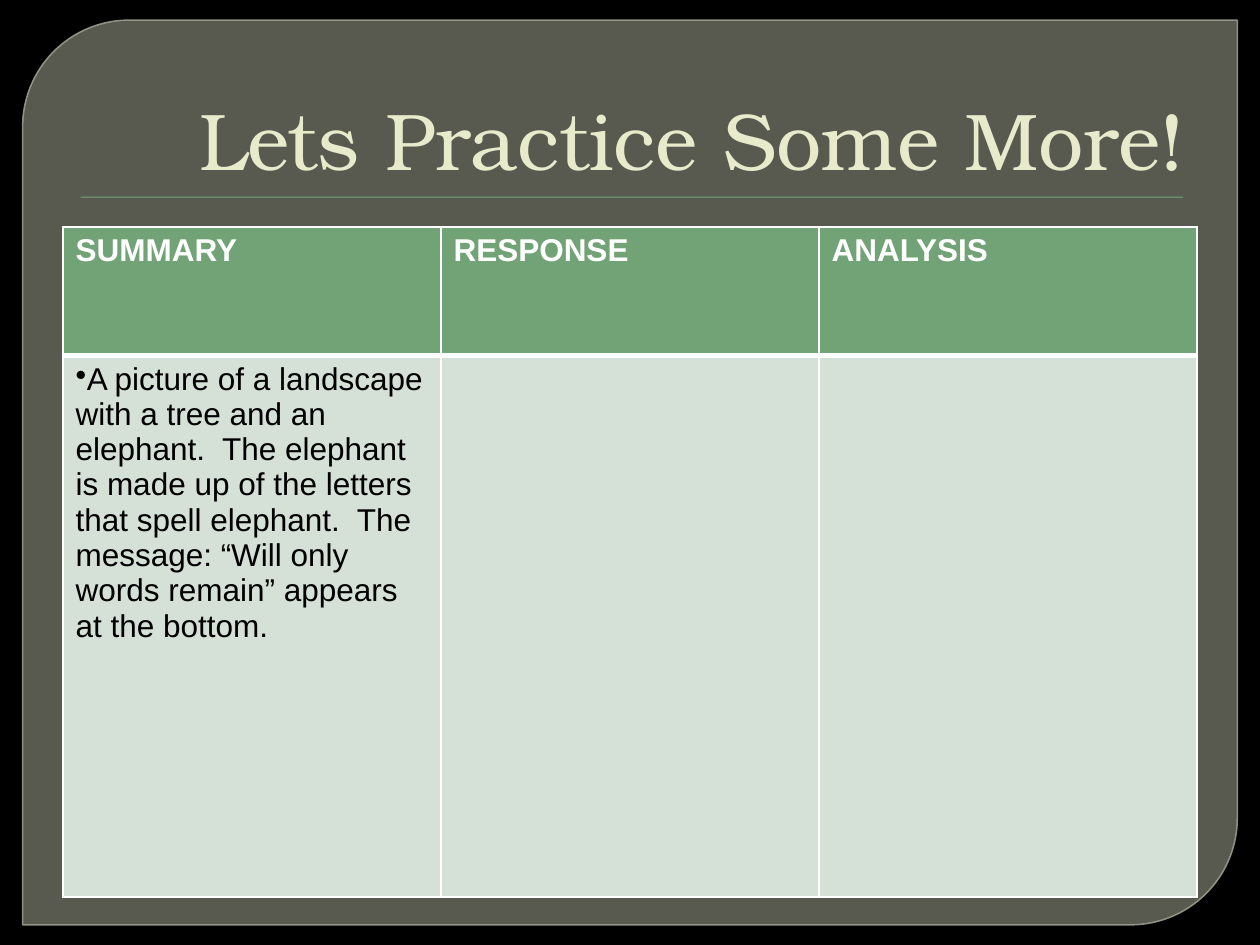
import pptx
import pptx.dml.color
import pptx.enum.shapes
import pptx.enum.text
import pptx.oxml
import pptx.oxml.ns
import pptx.util
from pptx.util import Inches

HEADERS = ["SUMMARY", "RESPONSE", "ANALYSIS"]
SUMMARY = ("A picture of a landscape with a tree and an elephant.  The elephant "
           "is made up of the letters that spell elephant.  The message: “Will "
           "only words remain” appears at the bottom.")
GREEN, PALE_GREEN, WHITE = "72A376", "D5E0D6", "FFFFFF"
NS = pptx.oxml.ns.nsdecls("a")


def rgb(color):
    return pptx.dml.color.RGBColor.from_string(color)


def set_fill(fill, color, alpha=100):
    fill.solid()
    fill.fore_color.rgb = rgb(color)
    if alpha < 100:
        clr = fill._xPr.find(".//" + pptx.oxml.ns.qn("a:srgbClr"))
        clr.append(pptx.oxml.parse_xml(f'<a:alpha {NS} val="{alpha * 1000}"/>'))


def write_text(tf, text, size=18, font="Arial", color="000000", bold=False,
               align=pptx.enum.text.PP_ALIGN.LEFT, bullet=None):
    p = tf.paragraphs[0]
    p.alignment = align
    if bullet:
        pPr = p._p.get_or_add_pPr()
        pPr.append(pptx.oxml.parse_xml(f'<a:buChar {NS} char="{bullet}"/>'))
    r = p.add_run()
    r.text = text
    r.font.size = pptx.util.Pt(size)
    r.font.name = font
    r.font.bold = bold
    r.font.color.rgb = rgb(color)


def add_panel(slide, left, top, width, height):
    sp = slide.shapes.add_shape(
        pptx.enum.shapes.MSO_SHAPE.ROUND_2_DIAG_RECTANGLE, left, top, width, height)
    sp.adjustments[0] = 0.118
    sp.adjustments[1] = 0
    sp.shadow.inherit = False
    set_fill(sp.fill, "888B7B", alpha=65)
    set_fill(sp.line.fill, "9DA090", alpha=88)
    sp.line.width = pptx.util.Pt(0.87)


def add_title(slide, left, top, width, height, text):
    """Place the title with a thin shadowed rule just below it."""
    rule = slide.shapes.add_shape(
        pptx.enum.shapes.MSO_SHAPE.RECTANGLE, left + Inches(0.14),
        top + height + Inches(0.03), width - Inches(0.25), Inches(0.01))
    set_fill(rule.fill, GREEN)
    rule.line.fill.background()
    rule._element.spPr.append(pptx.oxml.parse_xml(
        f'<a:effectLst {NS}><a:outerShdw blurRad="12700" dist="12700" dir="5400000">'
        '<a:srgbClr val="000000"><a:alpha val="75000"/></a:srgbClr>'
        '</a:outerShdw></a:effectLst>'))

    tf = slide.shapes.add_textbox(left, top, width, height).text_frame
    tf.word_wrap = True
    tf.vertical_anchor = pptx.enum.text.MSO_ANCHOR.BOTTOM
    write_text(tf, text, size=46, font="TeX Gyre Bonum", color="E7EACB",
               align=pptx.enum.text.PP_ALIGN.RIGHT)


def set_borders(cell, **widths):
    """Draw white borders; widths are in points, by side: L, R, T, B."""
    tcPr = cell._tc.get_or_add_tcPr()
    for side, width in widths.items():
        tcPr.append(pptx.oxml.parse_xml(
            f'<a:ln{side} {NS} w="{pptx.util.Pt(width)}"><a:solidFill>'
            f'<a:srgbClr val="{WHITE}"/></a:solidFill></a:ln{side}>'))


def add_response_table(slide, left, top, width, height):
    header_height = Inches(1.02)
    table = slide.shapes.add_table(2, len(HEADERS), left, top, width, height).table
    table.rows[0].height = header_height
    table.rows[1].height = height - header_height
    for i, header in enumerate(HEADERS):
        head, body = table.cell(0, i), table.cell(1, i)
        set_borders(head, L=1, R=1, T=1, B=3)
        set_borders(body, L=1, R=1, T=3, B=1)
        set_fill(head.fill, GREEN)
        set_fill(body.fill, PALE_GREEN)
        write_text(head.text_frame, header, color=WHITE, bold=True)
    write_text(table.cell(1, 0).text_frame, SUMMARY, bullet="•")


def main():
    prs = pptx.Presentation()
    prs.slide_width, prs.slide_height = Inches(10), Inches(7.5)
    slide = prs.slides.add_slide(prs.slide_layouts[6])
    set_fill(slide.background.fill, "000000")
    add_panel(slide, Inches(0.18), Inches(0.16), Inches(9.64), Inches(7.18))
    add_title(slide, Inches(0.5), Inches(0.28), Inches(9), Inches(1.25),
              "Lets Practice Some More!")
    add_response_table(slide, Inches(0.5), Inches(1.8), Inches(9), Inches(5.32))
    prs.save("out.pptx")


if __name__ == "__main__":
    main()
